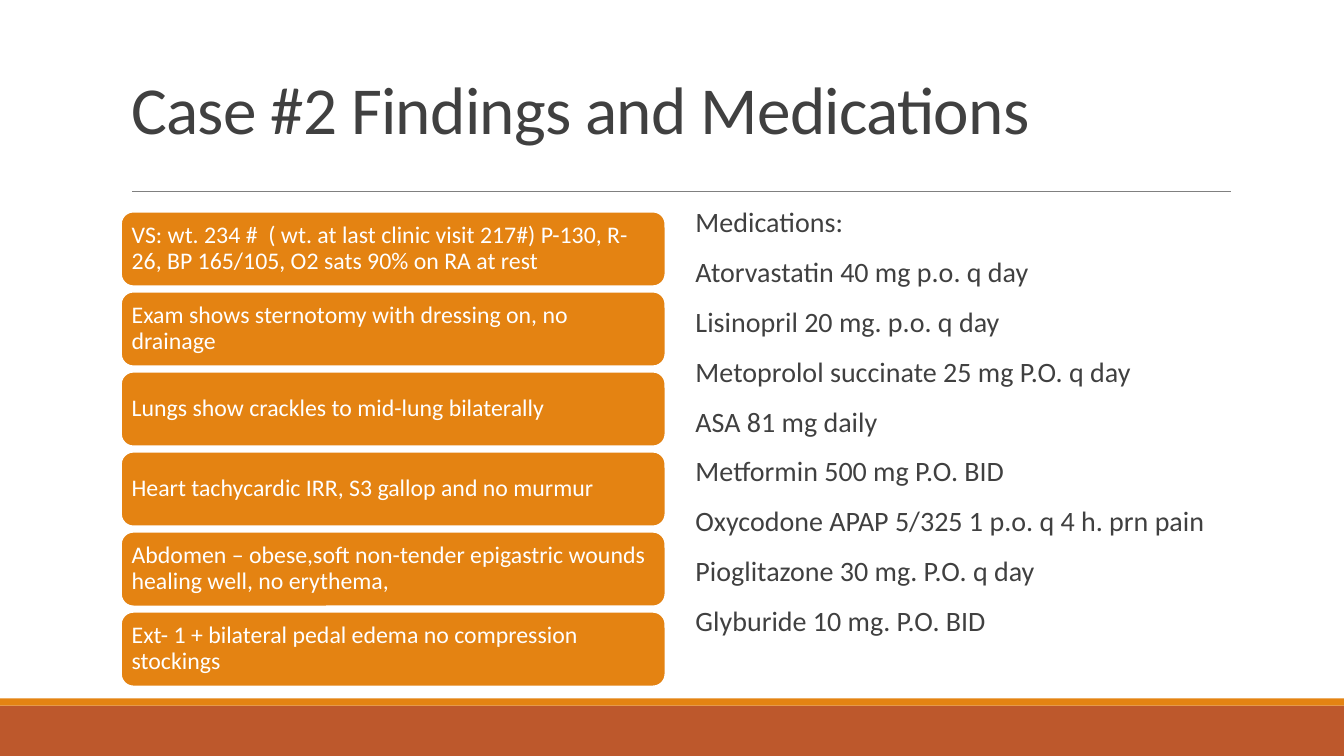
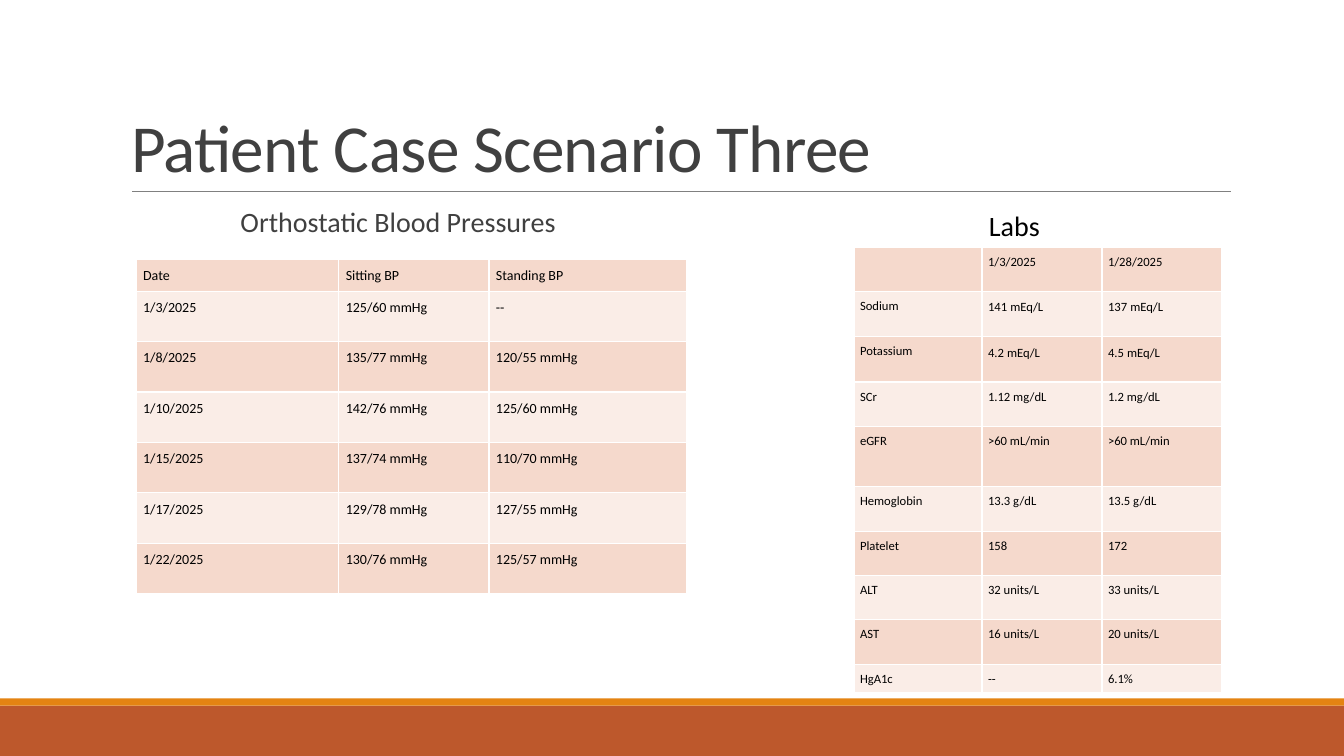
from lxml import etree
from pptx import Presentation
from pptx.dml.color import RGBColor
from pptx.enum.shapes import MSO_CONNECTOR, MSO_SHAPE
from pptx.enum.text import MSO_ANCHOR, MSO_AUTO_SIZE, PP_ALIGN
from pptx.oxml.ns import qn
from pptx.util import Inches, Pt

RECT, ROUND = MSO_SHAPE.RECTANGLE, MSO_SHAPE.ROUNDED_RECTANGLE
LINE = MSO_CONNECTOR.STRAIGHT
TOP, MIDDLE, BOTTOM = MSO_ANCHOR.TOP, MSO_ANCHOR.MIDDLE, MSO_ANCHOR.BOTTOM
LEFT, CENTER = PP_ALIGN.LEFT, PP_ALIGN.CENTER
FIXED = MSO_AUTO_SIZE.NONE

RUST = RGBColor(0xBD, 0x58, 0x2C)
ORANGE = RGBColor(0xE4, 0x83, 0x12)
GRAY = RGBColor(0x80, 0x80, 0x80)
DARK = RGBColor(0x40, 0x40, 0x40)
BLACK = RGBColor(0, 0, 0)
WHITE = RGBColor(0xFF, 0xFF, 0xFF)
PEACH = RGBColor(0xF5, 0xD9, 0xCC)
PALE = RGBColor(0xFA, 0xED, 0xE7)
FONT = "Calibri"

FINDINGS = [
    "VS: wt. 234 #  ( wt. at last clinic visit 217#) P-130, R- 26, BP 165/105, O2 sats 90% on RA at rest",
    "Exam shows sternotomy with dressing on, no drainage",
    "Lungs show crackles to mid-lung bilaterally",
    "Heart tachycardic IRR, S3 gallop and no murmur",
    "Abdomen – obese,soft non-tender epigastric wounds healing well, no erythema,",
    "Ext- 1 + bilateral pedal edema no compression stockings",
]
DRUGS = [
    "Medications:",
    "Atorvastatin 40 mg p.o. q day",
    "Lisinopril 20 mg. p.o. q day",
    "Metoprolol succinate 25 mg P.O. q day",
    "ASA 81 mg daily",
    "Metformin 500 mg P.O. BID",
    "Oxycodone APAP 5/325 1 p.o. q 4 h. prn pain",
    "Pioglitazone 30 mg. P.O. q day",
    "Glyburide 10 mg. P.O. BID",
]
PRESSURES = [
    ("Date", "Sitting BP", "Standing BP"),
    ("1/3/2025", "125/60 mmHg", "--"),
    ("1/8/2025", "135/77 mmHg", "120/55 mmHg"),
    ("1/10/2025", "142/76 mmHg", "125/60 mmHg"),
    ("1/15/2025", "137/74 mmHg", "110/70 mmHg"),
    ("1/17/2025", "129/78 mmHg", "127/55 mmHg"),
    ("1/22/2025", "130/76 mmHg", "125/57 mmHg"),
]
LABS = [
    ("", "1/3/2025", "1/28/2025"),
    ("Sodium", "141 mEq/L", "137 mEq/L"),
    ("Potassium", "4.2 mEq/L", "4.5 mEq/L"),
    ("SCr", "1.12 mg/dL", "1.2 mg/dL"),
    ("eGFR", ">60 mL/min", ">60 mL/min"),
    ("Hemoglobin", "13.3 g/dL", "13.5 g/dL"),
    ("Platelet", "158", "172"),
    ("ALT", "32 units/L", "33 units/L"),
    ("AST", "16 units/L", "20 units/L"),
    ("HgA1c", "--", "6.1%"),
]


def style(para, size, color, line=1.0, align=LEFT):
    para.alignment = align
    para.line_spacing = line
    for run in para.runs:
        run.font.name = FONT
        run.font.size = Pt(size)
        run.font.color.rgb = color


def inset(owner, side, edge):
    """Set the margins of a text frame or a table cell."""
    owner.margin_left = owner.margin_right = Inches(side)
    owner.margin_top = owner.margin_bottom = Inches(edge)


def border(cell):
    """Draw a thin white line on all four sides of a cell."""
    props = cell._tc.get_or_add_tcPr()
    for side in ("lnL", "lnR", "lnT", "lnB"):
        line = etree.SubElement(props, qn("a:" + side), w=str(Pt(1)))
        fill = etree.SubElement(line, qn("a:solidFill"))
        etree.SubElement(fill, qn("a:srgbClr"), val=str(WHITE))


class Deck:
    def __init__(self):
        self.prs = Presentation()
        self.prs.slide_width = Inches(13.33)
        self.prs.slide_height = Inches(7.5)
        self.slide = None

    def start(self, title, height):
        """Add a slide with the shared bands, rule and title."""
        self.slide = self.prs.slides.add_slide(self.prs.slide_layouts[5])
        self.box(RECT, (0, 7, 13.33, 0.5), RUST)
        self.box(RECT, (0, 6.93, 13.33, 0.07), ORANGE)
        self.rule(1.31, 12.21, 1.9)
        head = self.slide.shapes.title
        head.left, head.top, head.width, head.height = map(Inches, (1.2, 0.31, 11, height))
        frame = head.text_frame
        frame.text = title
        frame.auto_size = FIXED
        frame.vertical_anchor = BOTTOM
        para = frame.paragraphs[0]
        style(para, 48, DARK, 0.85)
        para.runs[0]._r.get_or_add_rPr().set("spc", "-50")

    def box(self, kind, area, fill):
        shape = self.slide.shapes.add_shape(kind, *map(Inches, area))
        shape.shadow.inherit = False
        shape.fill.solid()
        shape.fill.fore_color.rgb = fill
        shape.line.fill.background()
        return shape

    def rule(self, start, end, y):
        line = self.slide.shapes.add_connector(
            LINE, Inches(start), Inches(y), Inches(end), Inches(y))
        line.line.color.rgb = GRAY
        line.line.width = Pt(0.5)
        etree.SubElement(line._element.spPr, qn("a:effectLst"))

    def card(self, text, area):
        shape = self.box(ROUND, area, ORANGE)
        shape.line.color.rgb = WHITE
        shape.line.width = Pt(1.25)
        frame = shape.text_frame
        frame.text = text
        frame.word_wrap = True
        frame.vertical_anchor = MIDDLE
        inset(frame, 0.07, 0.07)
        style(frame.paragraphs[0], 17, WHITE, 0.9)

    def body(self, lines, area, align=LEFT):
        frame = self.slide.shapes.add_textbox(*map(Inches, area)).text_frame
        frame.text = "\n".join(lines)
        frame.word_wrap = True
        frame.vertical_anchor = TOP
        inset(frame, 0, 0.05)
        frame.margin_left = Inches(0.1)
        for para in frame.paragraphs:
            style(para, 20, DARK, 0.9, align)
            para.space_before = Pt(12)
            para.space_after = Pt(2)

    def label(self, text, area):
        frame = self.slide.shapes.add_textbox(*map(Inches, area)).text_frame
        frame.text = text
        frame.word_wrap = False
        style(frame.paragraphs[0], 20, BLACK)

    def table(self, rows, spot, widths, heights, size, pad):
        area = (*spot, sum(widths), sum(heights))
        grid = self.slide.shapes.add_table(
            len(rows), len(widths), *map(Inches, area)).table
        grid.first_row = grid.horz_banding = False
        for col, width in zip(grid.columns, widths):
            col.width = Inches(width)
        for i, (row, height) in enumerate(zip(rows, heights)):
            grid.rows[i].height = Inches(height)
            for j, text in enumerate(row):
                self.cell(grid.cell(i, j), text, PALE if i % 2 else PEACH, size, pad)

    def cell(self, cell, text, fill, size, pad):
        border(cell)
        cell.fill.solid()
        cell.fill.fore_color.rgb = fill
        inset(cell, pad, pad)
        para = cell.text_frame.paragraphs[0]
        if text.endswith("mEq/L"):
            for part in text.partition(" "):
                para.add_run().text = part
        else:
            para.text = text
        style(para, size, BLACK, 1.07)
        for run in para.runs:
            if run.text == " ":
                run.font.size = Pt(10)


def main():
    deck = Deck()

    deck.start("Case #2 Findings and Medications", 1.21)
    first, last = 2.1, 6.07
    step = (last - first) / (len(FINDINGS) - 1)
    for i, text in enumerate(FINDINGS):
        deck.card(text, (1.2, first + i * step, 5.4, 0.74))
    deck.body(DRUGS, (6.8, 2.02, 5.4, 4.73))

    deck.start("Patient Case Scenario Three", 1.59)
    deck.body(["Orthostatic Blood Pressures"], (1.2, 2.02, 5.4, 0.45), CENTER)
    deck.table(PRESSURES, (1.35, 2.57), (2.01, 1.49, 1.96),
               [0.31] + [0.5] * 6, 10, 0.07)
    deck.label("Labs", (9.71, 2.02, 0.71, 0.44))
    deck.table(LABS, (8.47, 2.45), (1.27, 1.19, 1.19),
               [0.44, 0.45, 0.45, 0.44, 0.6] + [0.44] * 4 + [0.28], 9, 0.06)

    deck.prs.save("out.pptx")


if __name__ == "__main__":
    main()
